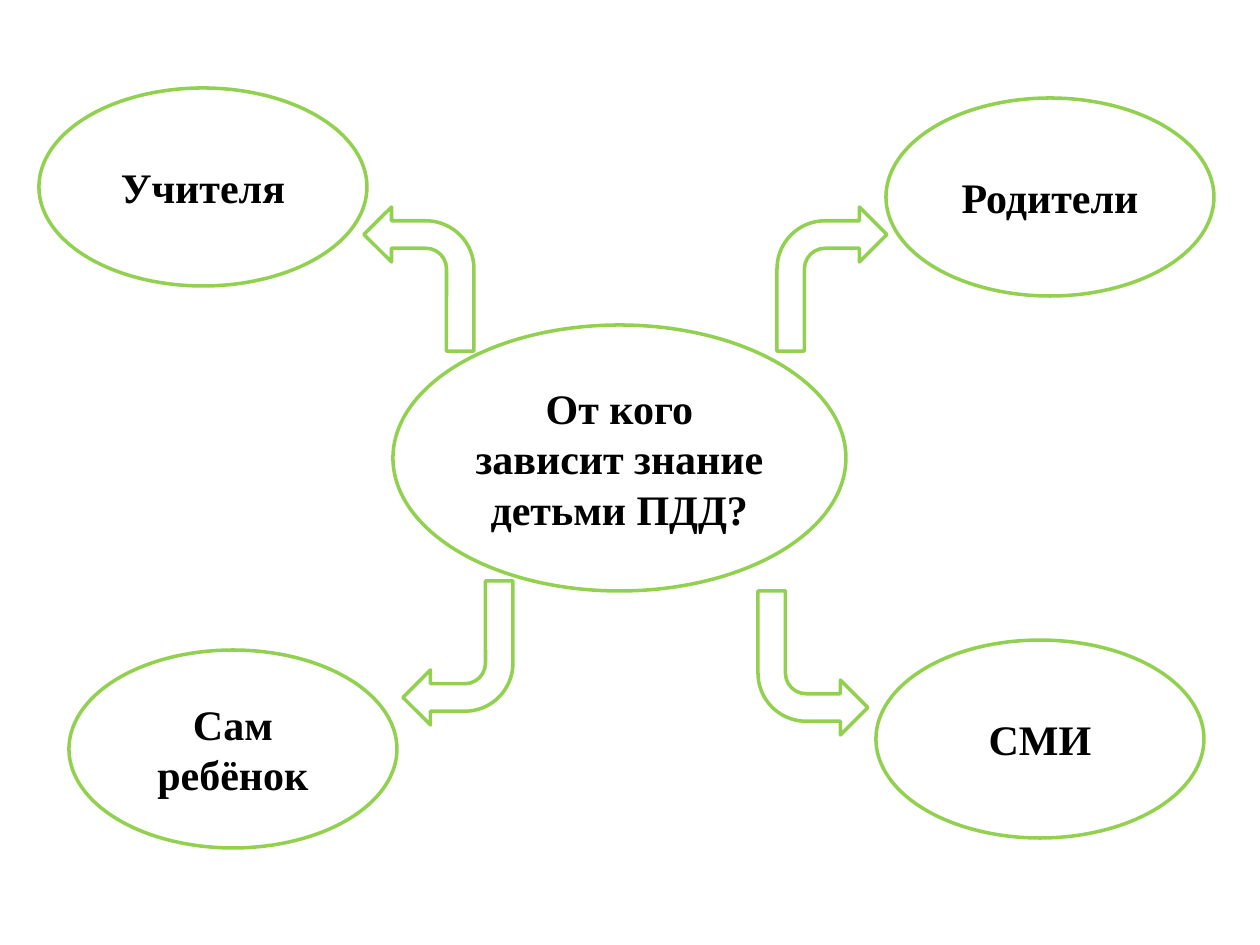
from pptx import Presentation
from pptx.dml.color import RGBColor
from pptx.enum.shapes import MSO_SHAPE
from pptx.enum.text import MSO_ANCHOR, PP_ALIGN
from pptx.util import Emu, Pt

PX_PER_INCH = 126
GREEN, WHITE, BLACK = "92D050", "FFFFFF", "000000"
LABEL_FONT = {"name": "Times New Roman", "size": Pt(24), "bold": True}
FACTOR_SIZE = (328, 198)
ARROW_SIZE = (110, 144)

QUESTION = ("От кого зависит знание детьми ПДД?", 393, 325, 453, 266)
FACTORS = [
    ("Родители", 886, 98),
    ("Сам ребёнок", 69, 650),
    ("СМИ", 876, 640),
    ("Учителя", 39, 88),
]
# left, top, flips that point the arrow at its factor
ARROWS = [
    (777, 207, ()),
    (364, 207, ("flipH",)),
    (758, 591, ("flipV",)),
    (403, 581, ("flipH", "flipV")),
]


def px(n):
    return Emu(round(n * 914400 / PX_PER_INCH))


def color(value):
    return RGBColor.from_string(value)


def add_outlined(s, kind, *box):
    sp = s.shapes.add_shape(kind, *map(px, box))
    sp.shadow.inherit = False
    sp.fill.solid()
    sp.fill.fore_color.rgb = color(WHITE)
    sp.line.color.rgb = color(GREEN)
    sp.line.width = Pt(2)
    return sp


def add_oval(s, text, *box):
    sp = add_outlined(s, MSO_SHAPE.OVAL, *box)
    tf = sp.text_frame
    tf.word_wrap = True
    tf.vertical_anchor = MSO_ANCHOR.MIDDLE
    p = tf.paragraphs[0]
    p.alignment = PP_ALIGN.CENTER
    r = p.add_run()
    r.text = text
    for name, value in LABEL_FONT.items():
        setattr(r.font, name, value)
    r.font.color.rgb = color(BLACK)


def add_bent_arrow(s, left, top, flips):
    sp = add_outlined(s, MSO_SHAPE.BENT_ARROW, left, top, *ARROW_SIZE)
    xfrm = sp._element.spPr.get_or_add_xfrm()
    for flip in flips:
        xfrm.set(flip, "1")


def main():
    prs = Presentation()
    prs.slide_width, prs.slide_height = px(1260), px(945)
    s = prs.slides.add_slide(prs.slide_layouts[6])

    # Central question
    add_oval(s, *QUESTION)

    # Arrows out to the factors
    for arrow in ARROWS:
        add_bent_arrow(s, *arrow)

    # Factors around the question
    for factor in FACTORS:
        add_oval(s, *factor, *FACTOR_SIZE)

    prs.save("out.pptx")


if __name__ == "__main__":
    main()
